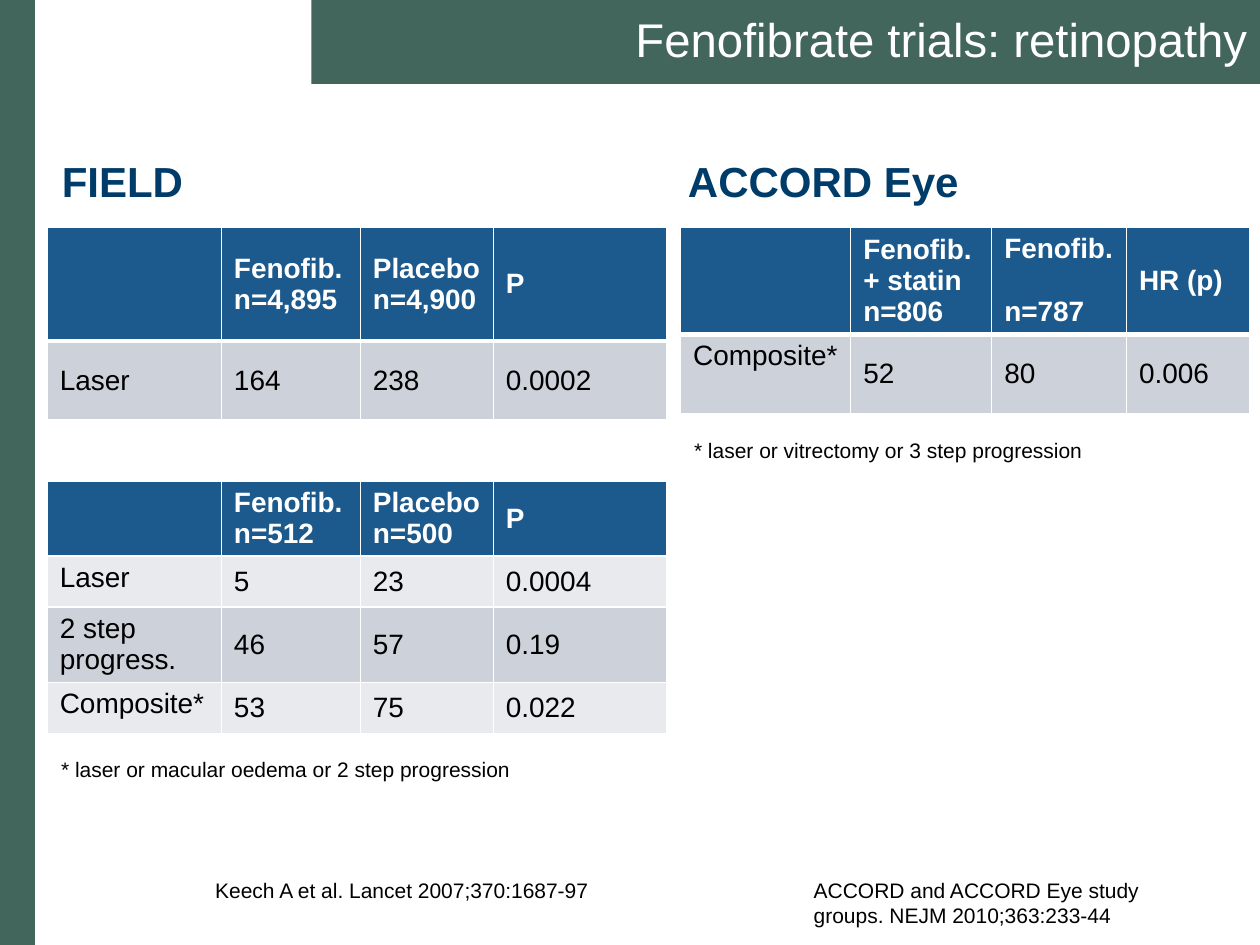
"""Build the slide comparing retinopathy results of two fenofibrate trials."""
import pptx
import pptx.dml.color
import pptx.enum.shapes
import pptx.enum.text
import pptx.oxml
import pptx.oxml.ns
import pptx.util

Pt = pptx.util.Pt
ALIGN = pptx.enum.text.PP_ALIGN
ANCHOR = pptx.enum.text.MSO_ANCHOR

COLORS = {"green": "42665C", "navy": "003C69", "header": "1C598C", "band": "CDD1DA",
          "light": "E8EAEE", "white": "FFFFFF", "black": "000000"}

TITLE = "Fenofibrate trials: retinopathy"
HEADINGS = [("FIELD", 1, 35.3), ("ACCORD Eye", 3, 393.1)]
NOTES = [
    ("Keech A et al. Lancet 2007;370:1687-97", (115.9, 498, 232, 22)),
    ("ACCORD and ACCORD Eye study groups. NEJM 2010;363:233-44", (457.9, 497.7, 232, 36)),
    ("* laser or macular oedema or 2 step progression", (27.8, 428.5, 275, 22)),
    ("* laser or vitrectomy or 3 step progression", (389.5, 246.5, 275, 22)),
]
TABLES = [
    {"left": 27, "columns": [99.5, 79.4, 76, 98.9], "rows": [
        (65, "header", ANCHOR.MIDDLE, ["", "Fenofib.\nn=4,895", "Placebo\nn=4,900", "P"]),
        (45.2, "band", ANCHOR.MIDDLE, ["Laser", "164", "238", "0.0002"]),
        (34.8, None, ANCHOR.TOP, ["", "", "", ""]),
        (43, "header", ANCHOR.MIDDLE, ["", "Fenofib.\nn=512", "Placebo\nn=500", "P"]),
        (29.2, "light", ANCHOR.TOP, ["Laser", "5", "23", "0.0004"]),
        (43, "band", ANCHOR.TOP, ["2 step progress.", "46", "57", "0.19"]),
        (29.2, "light", ANCHOR.TOP, ["Composite*", "53", "75", "0.022"]),
    ]},
    {"left": 388.9, "columns": [97.2, 80.6, 77, 70.6], "rows": [
        (59.5, "header", ANCHOR.MIDDLE,
         ["", "Fenofib. + statin\nn=806", "Fenofib.\nn=787", "HR (p)"]),
        (45.2, "band", ANCHOR.TOP, ["Composite*", "52", "80", "0.006"]),
    ]},
]
TABLE_TOP = 129.8
LOWERED = {"Fenofib.\nn=787": 18.4}


def rgb(name):
    return pptx.dml.color.RGBColor.from_string(COLORS[name])


def assign(target, values):
    for name, value in values.items():
        setattr(target, name, value)


def place(shape, left, top, width, height):
    assign(shape, {"left": Pt(left), "top": Pt(top), "width": Pt(width), "height": Pt(height)})


def write(frame, text, size, color, bold=False, **paragraph):
    frame.text = text
    for para in frame.paragraphs:
        assign(para, paragraph)
        assign(para.font, {"name": "Arial", "size": Pt(size), "bold": bold})
        para.font.color.rgb = rgb(color)


def set_frame(frame, anchor, margins):
    assign(frame, {"word_wrap": True, "auto_size": pptx.enum.text.MSO_AUTO_SIZE.NONE,
                   "vertical_anchor": anchor})
    sides = ("margin_left", "margin_top", "margin_right", "margin_bottom")
    assign(frame, dict(zip(sides, map(Pt, margins))))


def set_borders(cell, widths):
    properties = cell._tc.get_or_add_tcPr()
    for index, (side, width) in enumerate(widths.items()):
        line = pptx.oxml.parse_xml(
            f'<a:ln{side} {pptx.oxml.ns.nsdecls("a")} w="{Pt(width)}"><a:solidFill>'
            f'<a:srgbClr val="{COLORS["white"]}"/></a:solidFill></a:ln{side}>')
        properties.insert(index, line)


def add_results(page, left, columns, rows):
    frame = page.shapes.add_table(len(rows), len(columns), Pt(left), Pt(TABLE_TOP),
                                  Pt(sum(columns)), Pt(sum(row[0] for row in rows)))
    table = frame.table
    assign(table, {"first_row": False, "horz_banding": False})
    for column, width in zip(table.columns, columns):
        column.width = Pt(width)
    for r, (height, fill, label_anchor, texts) in enumerate(rows):
        table.rows[r].height = Pt(height)
        header = fill == "header"
        for c, text in enumerate(texts):
            cell = table.cell(r, c)
            cell.vertical_anchor = ANCHOR.MIDDLE if c else label_anchor
            write(cell.text_frame, text, 16, "white" if header else "black", header)
            if text in LOWERED:
                cell.text_frame.paragraphs[-1].space_before = Pt(LOWERED[text])
            if fill:
                cell.fill.solid()
                cell.fill.fore_color.rgb = rgb(fill)
            else:
                cell.fill.background()
            set_borders(cell, {"L": 1, "R": 1, "T": 3 if r == 1 else 1, "B": 3 if r == 0 else 1})


def main():
    deck = pptx.Presentation()
    assign(deck, {"slide_width": Pt(720), "slide_height": Pt(540)})
    page = deck.slides.add_slide(deck.slide_layouts[4])
    holders = {holder.placeholder_format.idx: holder for holder in page.placeholders}
    for index in (2, 4):
        holders[index].element.getparent().remove(holders[index].element)

    bar = page.shapes.add_shape(pptx.enum.shapes.MSO_SHAPE.RECTANGLE, 0, 0, Pt(20), Pt(540))
    bar.shadow.inherit = False
    bar.line.fill.background()
    title = page.shapes.title
    place(title, 178, 0, 542, 48)
    for shape in (bar, title):
        shape.fill.solid()
        shape.fill.fore_color.rgb = rgb("green")
    set_frame(title.text_frame, ANCHOR.MIDDLE, (5.8, 2.9, 7.2, 2.9))
    write(title.text_frame, TITLE, 27, "white", alignment=ALIGN.RIGHT, line_spacing=0.9)

    for text, index, left in HEADINGS:
        place(holders[index], left, 67, 345, 50.4)
        set_frame(holders[index].text_frame, ANCHOR.BOTTOM, (0, 0, 0, 0))
        write(holders[index].text_frame, text, 24, "navy", True, space_before=Pt(0))
    for results in TABLES:
        add_results(page, **results)
    for text, position in NOTES:
        box = page.shapes.add_textbox(*map(Pt, position))
        set_frame(box.text_frame, ANCHOR.TOP, (7.2, 3.6, 7.2, 3.6))
        write(box.text_frame, text, 12, "black")
    deck.save("out.pptx")


if __name__ == "__main__":
    main()
